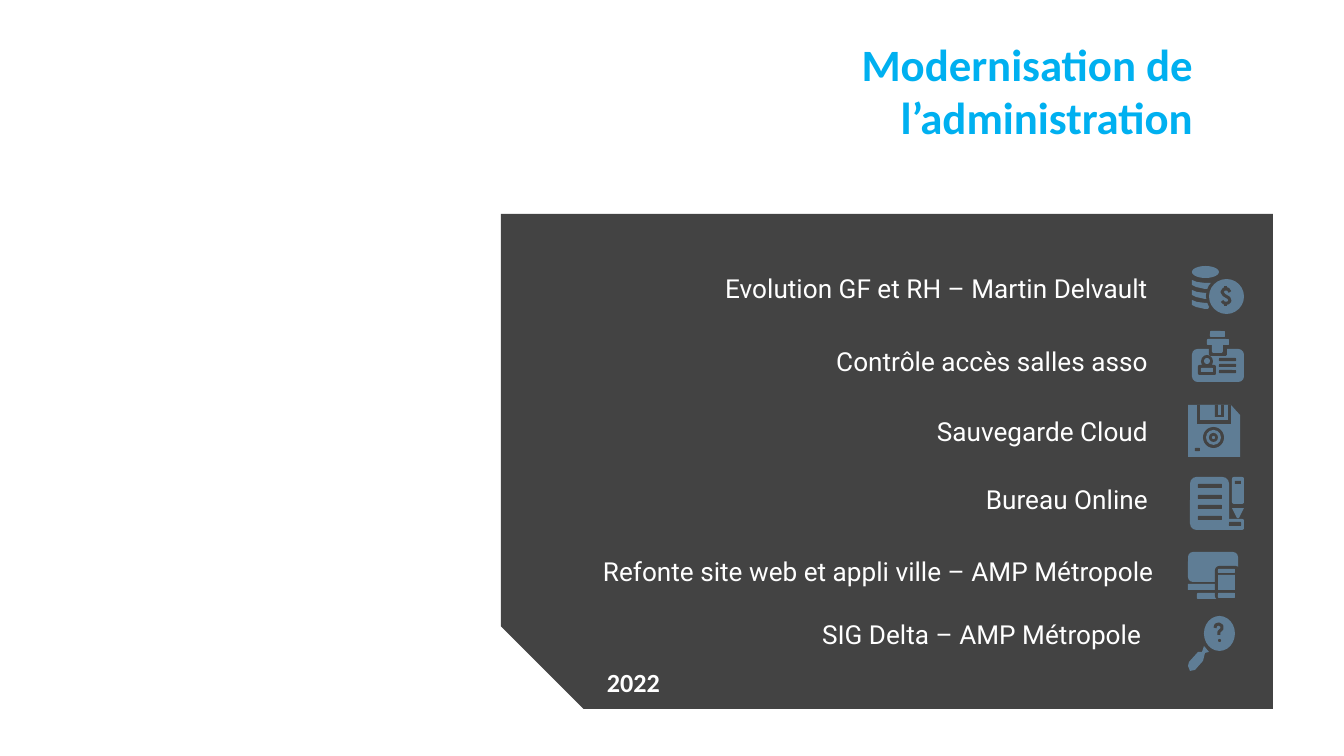
from pptx import Presentation
from pptx.dml.color import RGBColor
from pptx.enum.shapes import MSO_SHAPE
from pptx.enum.text import MSO_ANCHOR, MSO_AUTO_SIZE, PP_ALIGN
from pptx.util import Emu, Pt

PX = 914400 / 134.4
RECT, ROUND, OVAL = MSO_SHAPE.RECTANGLE, MSO_SHAPE.ROUNDED_RECTANGLE, MSO_SHAPE.OVAL
SNIP = MSO_SHAPE.SNIP_1_RECTANGLE
TOP, BOTTOM = MSO_ANCHOR.TOP, MSO_ANCHOR.BOTTOM
LEFT, RIGHT = PP_ALIGN.LEFT, PP_ALIGN.RIGHT
POLY, STROKE = "poly", "stroke"
DARK, STEEL, WHITE, CYAN = "434343", "5F7D95", "FFFFFF", "00B0F0"
INSET = 13

# Icon parts: kind, geometry relative to the icon, colour
COINS = [
    (OVAL, (0, 0, 27, 12), STEEL),
    *[(POLY, [(0, y), (5, y + 2), (13, y + 3), (20, y + 3), (16, y + 9),
              (13, y + 9), (4, y + 7), (0, y + 5)], STEEL) for y in (14, 24, 34)],
    (OVAL, (14, 10, 40, 40), DARK),
    (OVAL, (17, 13, 35, 35), STEEL),
    (STROKE, [(38, 26), (36, 23), (32, 23), (30, 26), (32, 29), (37, 32),
              (38, 35), (36, 37), (32, 37), (30, 35)], DARK),
    *[(STROKE, [(34, y), (34, y + 3)], DARK) for y in (20, 37)],
]
BADGE = [
    (ROUND, (0, 18, 52, 33), STEEL),
    (ROUND, (17, 14, 18, 11), DARK),
    (ROUND, (18, 0, 15, 6), STEEL),
    (ROUND, (15, 8, 22, 6), STEEL),
    (ROUND, (20, 10, 11, 12), STEEL),
    (OVAL, (9, 24, 12, 13), DARK),
    (ROUND, (6, 34, 18, 10), DARK),
    (OVAL, (12, 27, 6, 6), STEEL),
    (ROUND, (9, 37, 12, 4), STEEL),
    *[(ROUND, (27, y, 17, 3), DARK) for y in (27, 33, 39)],
]
FLOPPY = [
    (POLY, [(0, 0), (43, 0), (52, 10), (52, 52), (0, 52)], STEEL),
    (RECT, (9, 0, 34, 19), DARK),
    (RECT, (12, 0, 28, 15), STEEL),
    (RECT, (27, 0, 9, 12), DARK),
    (RECT, (30, 0, 3, 10), STEEL),
    (OVAL, (15, 22, 21, 21), DARK),
    (OVAL, (18, 25, 15, 15), STEEL),
    (OVAL, (21, 28, 9, 9), DARK),
    (OVAL, (24, 31, 3, 3), STEEL),
    (ROUND, (7, 43, 5, 3), DARK),
]
DOCUMENT = [
    (ROUND, (0, 0, 39, 53), STEEL),
    (ROUND, (8, 42, 46, 11), STEEL),
    (ROUND, (39, 45, 12, 4), DARK),
    *[(ROUND, (8, y, 24, 4), DARK) for y in (7, 18, 28, 39)],
    (ROUND, (42, 0, 12, 27), STEEL),
    (RECT, (45, 4, 6, 3), DARK),
    (POLY, [(42, 31), (54, 31), (49, 41), (47, 41)], STEEL),
]
DEVICES = [
    (ROUND, (0, 0, 50, 30), STEEL),
    (RECT, (0, 32, 27, 6), STEEL),
    (ROUND, (9, 41, 20, 6), STEEL),
    (ROUND, (27, 14, 25, 34), DARK),
    (ROUND, (30, 17, 17, 4), STEEL),
    (RECT, (30, 23, 17, 15), STEEL),
    (ROUND, (30, 41, 17, 5), STEEL),
]
SEARCH = [
    (OVAL, (16, 0, 31, 35), STEEL),
    (POLY, [(16, 30), (21, 36), (17, 37), (15, 45), (7, 54), (2, 55),
            (0, 50), (1, 46), (10, 36), (14, 36)], STEEL),
    (STROKE, [(27, 12), (28, 9), (31, 8), (34, 10), (34, 13), (31, 16), (31, 19)], DARK),
    (OVAL, (30, 23, 3, 3), DARK),
]

# Text, its box and alignment, icon position and parts, relative to the panel
PROJECTS = [
    ("Evolution GF et RH – Martin Delvault", (151, 45, 509, 60), RIGHT, (691, 52), COINS),
    ("Contrôle accès salles asso", (151, 118, 509, 60), RIGHT, (691, 117), BADGE),
    ("Sauvegarde Cloud", (151, 188, 509, 60), RIGHT, (687, 191), FLOPPY),
    ("Bureau Online", (151, 256, 509, 60), RIGHT, (689, 263), DOCUMENT),
    ("Refonte site web et appli ville – AMP Métropole", (89, 328, 614, 60), LEFT,
     (687, 338), DEVICES),
    ("SIG Delta – AMP Métropole", (308, 391, 453, 60), LEFT, (687, 402), SEARCH),
]


def px(n):
    return Emu(round(n * PX))


def rgb(value):
    return RGBColor.from_string(value)


def place(sp, box):
    sp.left, sp.top, sp.width, sp.height = [px(n) for n in box]


def fill_plain(sp, color):
    sp.shadow.inherit = False
    sp.fill.solid()
    sp.fill.fore_color.rgb = rgb(color)
    sp.line.fill.background()


def write(sp, text, font, size, color, align, anchor=TOP, bold=False, bottom=INSET):
    tf = sp.text_frame
    tf.word_wrap = True
    tf.auto_size = MSO_AUTO_SIZE.NONE
    tf.vertical_anchor = anchor
    tf.margin_left = tf.margin_right = tf.margin_top = px(INSET)
    tf.margin_bottom = px(bottom)
    p = tf.paragraphs[0]
    p.alignment = align
    r = p.add_run()
    r.text = text
    r.font.name, r.font.size, r.font.bold = font, Pt(size), bold
    r.font.color.rgb = rgb(color)


def add_text(s, box, *args, **kwargs):
    sp = s.shapes.add_textbox(*[px(n) for n in box])
    write(sp, *args, **kwargs)


def add_outline(shapes, points, closed):
    builder = shapes.build_freeform(*points[0], scale=PX)
    builder.add_line_segments(points[1:], close=closed)
    return builder.convert_to_shape()


def add_icon(s, x, y, parts):
    shapes = s.shapes.add_group_shape().shapes
    for kind, geometry, color in parts:
        if kind in (POLY, STROKE):
            points = [(x + dx, y + dy) for dx, dy in geometry]
            sp = add_outline(shapes, points, kind == POLY)
        else:
            dx, dy, w, h = geometry
            sp = shapes.add_shape(kind, px(x + dx), px(y + dy), px(w), px(h))
        fill_plain(sp, color)
        if kind == STROKE:
            sp.fill.background()
            sp.line.color.rgb = rgb(color)
            sp.line.width = px(3)


def add_heading(s, box):
    sp = s.shapes.title
    place(sp, box)
    write(sp, "Modernisation de l’administration", "Calibri", 24, CYAN, RIGHT,
          BOTTOM, bold=True, bottom=59)


def add_panel(s, x, y, w, h):
    sp = s.shapes.add_shape(SNIP, px(x), px(y), px(w), px(h))
    sp.adjustments[0] = 0.167
    sp.rotation = 180
    fill_plain(sp, DARK)
    add_text(s, (x - 90, y + 434, 262, 63), "2022", "Calibri", 14, WHITE, RIGHT,
             BOTTOM, bold=True)
    for text, (dx, dy, tw, th), align, (ix, iy), parts in PROJECTS:
        add_text(s, (x + dx, y + dy, tw, th), text, "Roboto", 14, WHITE, align)
        add_icon(s, x + ix, y + iy, parts)


def main():
    prs = Presentation()
    prs.slide_width, prs.slide_height = px(1344), px(756)
    s = prs.slides.add_slide(prs.slide_layouts[5])
    add_heading(s, (581, 47, 625, 156))
    add_panel(s, 501, 214, 772, 495)
    prs.save("out.pptx")


if __name__ == "__main__":
    main()
